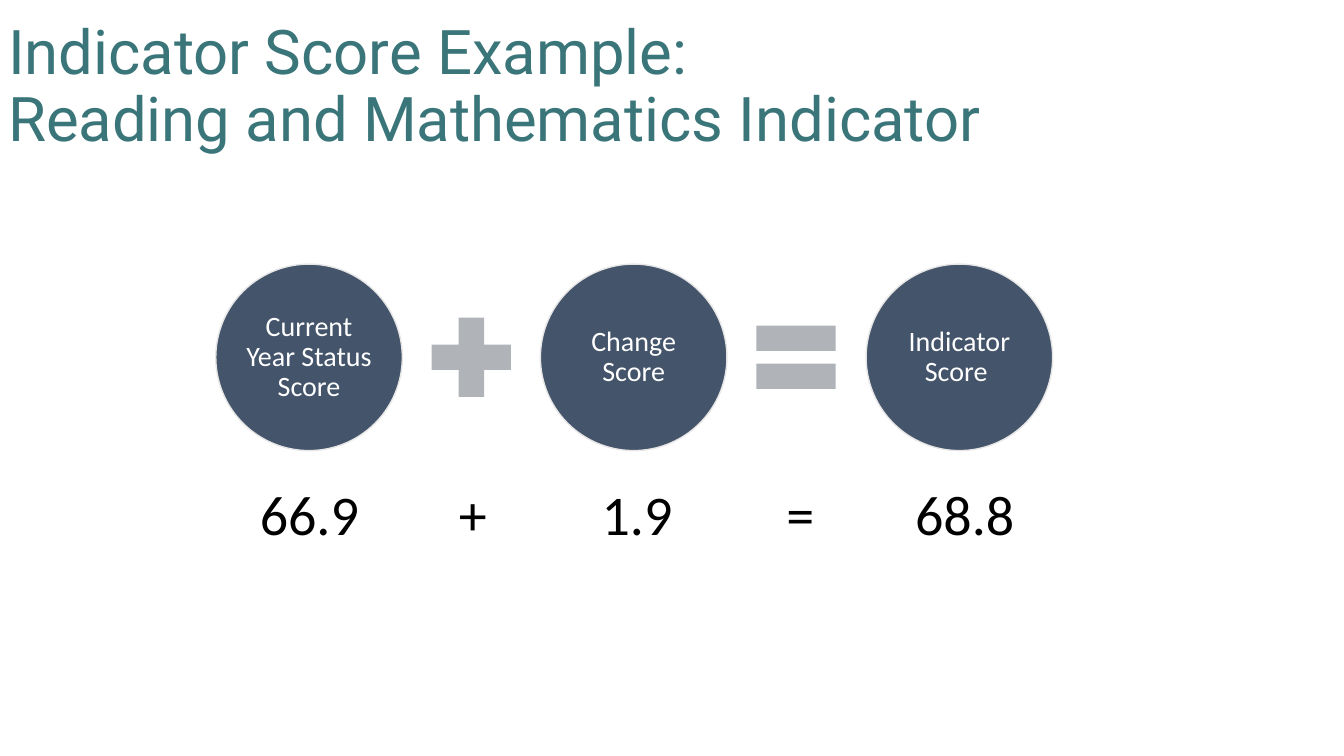
import dataclasses

import lxml.etree
import pptx
import pptx.dml.color
import pptx.enum.shapes
import pptx.enum.text
import pptx.oxml.ns
import pptx.presentation
import pptx.shapes.autoshape
import pptx.slide
import pptx.text.text
import pptx.util

PX = 9144  # EMU per px, 100 px to the inch
COLORS = {
    "title": "3A757A",
    "disc": "44546A",
    "rim": "E7E6E6",
    "sign": "B0B4B9",
    "white": "FFFFFF",
    "black": "000000",
}
SHAPE = pptx.enum.shapes.MSO_SHAPE
ALIGN = pptx.enum.text.PP_ALIGN
MIDDLE = pptx.enum.text.MSO_ANCHOR.MIDDLE
CENTER_Y = 354
INSET = 10


@dataclasses.dataclass
class Term:
    kind: pptx.enum.shapes.MSO_SHAPE
    size: int
    fill: str
    value: str
    label: str = ""


TERMS = [
    Term(SHAPE.OVAL, 185, "disc", "66.9", "Current Year Status Score"),
    Term(SHAPE.MATH_PLUS, 107, "sign", "+"),
    Term(SHAPE.OVAL, 185, "disc", "1.9", "Change Score"),
    Term(SHAPE.MATH_EQUAL, 107, "sign", "="),
    Term(SHAPE.OVAL, 185, "disc", "68.8", "Indicator Score "),
]


def px(count: int) -> pptx.util.Emu:
    return pptx.util.Emu(count * PX)


def rgb(name: str) -> pptx.dml.color.RGBColor:
    return pptx.dml.color.RGBColor.from_string(COLORS[name])


def add_run(para: pptx.text.text._Paragraph, text: str, size: int,
            color: str, face: str = "Calibri") -> None:
    run = para.add_run()
    run.text = text
    run.font.size = pptx.util.Pt(size)
    run.font.name = face
    run.font.color.rgb = rgb(color)


def set_title(slide: pptx.slide.Slide) -> None:
    title = slide.shapes.title
    title.left, title.top, title.width, title.height = map(px, (-2, 15, 1150, 145))
    frame = title.text_frame
    frame.vertical_anchor = MIDDLE
    frame.auto_size = pptx.enum.text.MSO_AUTO_SIZE.NONE
    para = frame.paragraphs[0]
    para.alignment = ALIGN.LEFT
    para.line_spacing = 0.9
    add_run(para, "Indicator Score Example:", 44, "title", "Roboto")
    para.add_line_break()
    add_run(para, "Reading and Mathematics Indicator", 44, "title", "Roboto")


def add_label(shape: pptx.shapes.autoshape.Shape, text: str) -> None:
    frame = shape.text_frame
    frame.word_wrap = True
    frame.vertical_anchor = MIDDLE
    frame.margin_left = frame.margin_right = px(3)
    frame.margin_top = frame.margin_bottom = px(3)
    para = frame.paragraphs[0]
    para.alignment = ALIGN.CENTER
    para.line_spacing = 0.9
    add_run(para, text, 20, "white")


def add_term(slide: pptx.slide.Slide, term: Term, mid: int) -> None:
    half = term.size // 2
    shape = slide.shapes.add_shape(term.kind, px(mid - half), px(CENTER_Y - half),
                                   px(term.size), px(term.size))
    shape.shadow.inherit = False
    shape.fill.solid()
    shape.fill.fore_color.rgb = rgb(term.fill)
    if term.label:
        shape.line.color.rgb = rgb("rim")
        shape.line.width = pptx.util.Pt(1)
        add_label(shape, term.label)
    else:
        shape.line.fill.background()


def add_sum(slide: pptx.slide.Slide) -> None:
    box = slide.shapes.add_textbox(px(0), px(471), px(1333), px(77))
    frame = box.text_frame
    frame.word_wrap = True
    para = frame.paragraphs[0]
    # Centred tab stops, one under each term
    props = para._p.get_or_add_pPr()
    stops = lxml.etree.SubElement(props, pptx.oxml.ns.qn("a:tabLst"))
    for i, term in enumerate(TERMS):
        spot = px(307 + 325 * i // 2 - INSET)
        lxml.etree.SubElement(stops, pptx.oxml.ns.qn("a:tab"),
                              pos=str(int(spot)), algn="ctr")
        add_run(para, "\t" + term.value, 40, "black")


def main() -> None:
    deck = pptx.Presentation()
    deck.slide_width, deck.slide_height = px(1333), px(750)
    slide = deck.slides.add_slide(deck.slide_layouts[5])
    set_title(slide)
    # Equation of discs and signs, evenly spaced
    for i, term in enumerate(TERMS):
        add_term(slide, term, 306 + 645 * i // 4)
    # Worked numbers
    add_sum(slide)
    deck.save("out.pptx")


if __name__ == "__main__":
    main()
